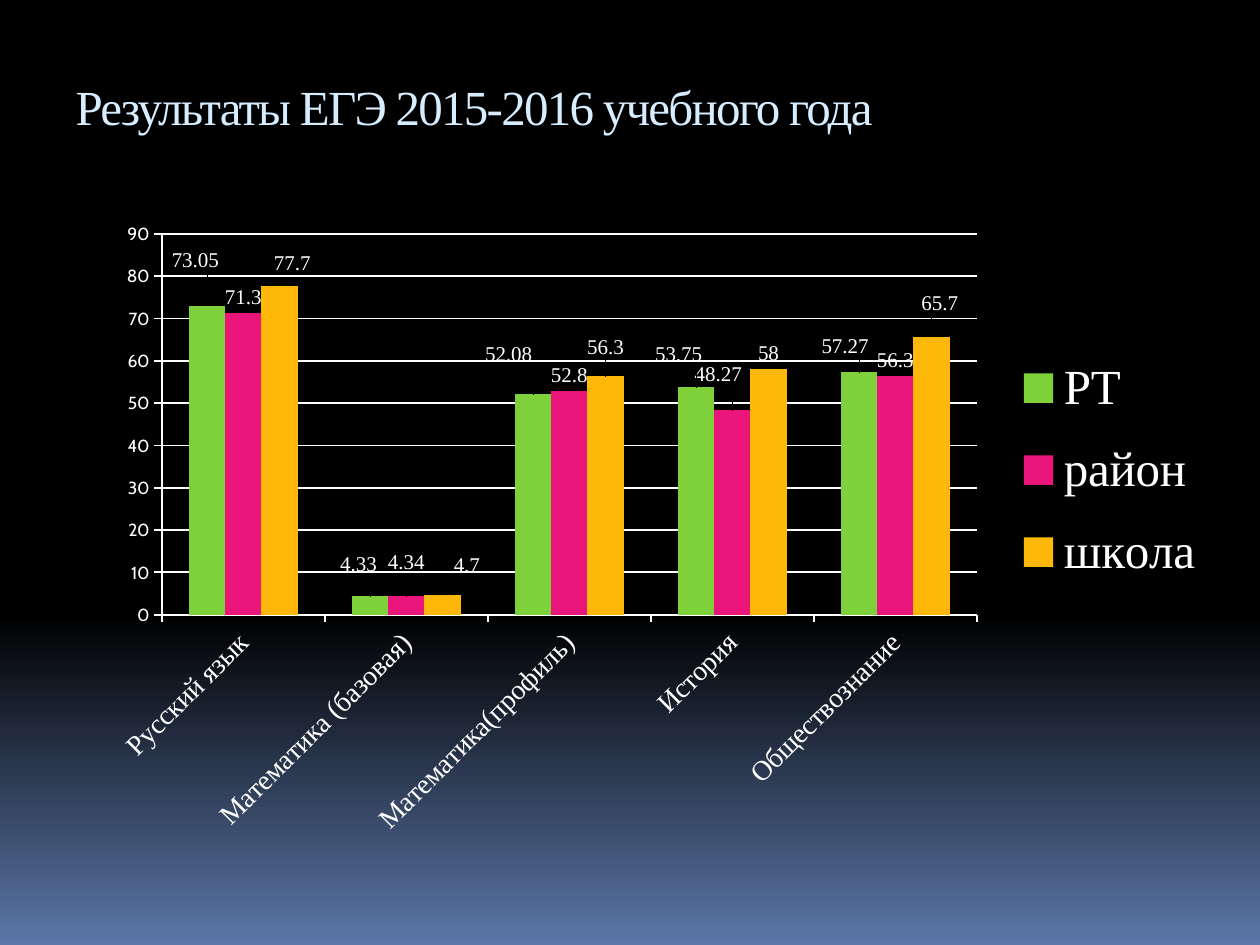
from lxml.etree import SubElement
from pptx import Presentation
from pptx.chart.data import CategoryChartData as Data
from pptx.dml.color import RGBColor
from pptx.enum.chart import XL_CHART_TYPE as Kind, XL_LABEL_POSITION as Pos
from pptx.enum.chart import XL_LEGEND_POSITION as Side, XL_TICK_MARK as Tick
from pptx.enum.text import MSO_ANCHOR as Anchor, PP_ALIGN as Align
from pptx.oxml.ns import qn
from pptx.util import Cm, Pt

SERIF = "Times New Roman"
WHITE = "FFFFFF"
CATS = ["Русский язык", "Математика (базовая)", "Математика(профиль)",
        "История", "Обществознание"]
# Name, colour, values, label shifts by point in percent of the chart
SERIES = [
    ("РТ", "7FD13B", [73.05, 4.33, 52.08, 53.75, 57.27],
     {0: (-1, -4.6), 1: (-1, -2.6), 2: (-2.1, -3.8), 3: (-1.5, -2.7), 4: (-1.2, -1.6)}),
    ("район", "EA157A", [71.3, 4.34, 52.8, 48.27, 56.3],
     {1: (0, -2.9), 3: (-1.2, -3.2)}),
    ("школа", "FEB80A", [77.7, 4.7, 56.3, 58, 65.7],
     {0: (1.1, -1.1), 1: (2.1, -2.2), 2: (0, -2.1), 4: (0.7, -2.7)}),
]


def rgb(code):
    return RGBColor.from_string(code)


def style(font, size, name=SERIF, color=WHITE):
    font.size = Pt(size)
    font.name = name
    font.color.rgb = rgb(color)


def place(item, left, top, width, height):
    item.left, item.top = Cm(left), Cm(top)
    item.width, item.height = Cm(width), Cm(height)


def paint(slide):
    fill = slide.background.fill
    fill.gradient()
    fill.gradient_angle = 270
    for stop, (at, code) in zip(fill.gradient_stops, [(0.65, "000000"), (1, "5B77A8")]):
        stop.position = at
        stop.color.rgb = rgb(code)


def add_title(slide, text):
    title = slide.shapes.title
    place(title, 1.27, 1.42, 22.86, 2.54)
    frame = title.text_frame
    frame.text = text
    frame.vertical_anchor = Anchor.TOP
    para = frame.paragraphs[0]
    para.alignment = Align.LEFT
    style(para.font, 28, color="D6ECFF")
    para.runs[0].font._element.set("spc", "-100")


def set_layout(prior, **parts):
    """Add a manual layout, in percent, right after the given element."""
    old = prior.getnext()
    if old is not None and old.tag == qn("c:layout"):
        old.getparent().remove(old)
    layout = SubElement(prior.getparent(), qn("c:layout"))
    prior.addnext(layout)
    manual = SubElement(layout, qn("c:manualLayout"))
    for tag, val in parts.items():
        text = val if isinstance(val, str) else f"{val / 100:g}"
        SubElement(manual, qn(f"c:{tag}")).set("val", text)


def add_labels(ser, shifts):
    labels = ser.data_labels
    labels.show_value = True
    labels.position = Pos.OUTSIDE_END
    style(labels.font, 12)
    for idx, (x, y) in shifts.items():
        label = ser.points[idx].data_label
        style(label.font, 12)
        label.position = Pos.OUTSIDE_END
    for node in labels._element.findall(qn("c:dLbl")):
        mark = node.find(qn("c:idx"))
        x, y = shifts[int(mark.get("val"))]
        set_layout(mark, x=x, y=y)


def format_axes(chart):
    cat, val = chart.category_axis, chart.value_axis
    val.minimum_scale, val.maximum_scale, val.major_unit = 0, 90, 10
    val.has_major_gridlines = True
    for axis in (cat, val):
        axis.major_tick_mark = Tick.OUTSIDE
    for line in (cat.format.line, val.format.line, val.major_gridlines.format.line):
        line.color.rgb = rgb(WHITE)
        line.width = Pt(1)
    style(val.tick_labels.font, 10, "Cabin")
    style(cat.tick_labels.font, 16)
    body = cat._element.find(qn("c:txPr")).find(qn("a:bodyPr"))
    body.set("rot", "-2700000")
    body.set("vert", "horz")


def add_legend(chart):
    chart.has_legend = True
    legend = chart.legend
    legend.position = Side.RIGHT
    legend.include_in_layout = False
    style(legend.font, 28)
    set_layout(legend._element.find(qn("c:legendPos")),
               xMode="edge", yMode="edge", x=81, y=18, w=18, h=44)


def add_chart(slide):
    data = Data()
    data.categories = CATS
    for name, _, vals, _ in SERIES:
        data.add_series(name, vals)
    box = map(Cm, (1.27, 4.45, 23.44, 12.57))
    chart = slide.shapes.add_chart(Kind.COLUMN_CLUSTERED, *box, data).chart
    chart.has_title = False
    style(chart.font, 10, "Cabin")
    plot = chart.plots[0]
    plot.gap_width, plot.overlap = 150, 0
    plot.vary_by_categories = False
    for ser, (_, color, _, shifts) in zip(plot.series, SERIES):
        ser.format.fill.solid()
        ser.format.fill.fore_color.rgb = rgb(color)
        ser.invert_if_negative = False
        add_labels(ser, shifts)
    format_axes(chart)
    add_legend(chart)
    area = chart._chartSpace.find(qn("c:chart")).find(qn("c:plotArea"))
    mark = SubElement(area, qn("c:layout"))
    area.insert(0, mark)
    set_layout(mark, layoutTarget="inner", xMode="edge", yMode="edge",
               x=8.5, y=2.1, w=70.1, h=61.1)
    area.remove(mark)


def main():
    deck = Presentation()
    deck.slide_width, deck.slide_height = Cm(25.4), Cm(19.05)
    slide = deck.slides.add_slide(deck.slide_layouts[5])
    paint(slide)
    add_title(slide, "Результаты ЕГЭ 2015-2016 учебного года")
    add_chart(slide)
    deck.save("out.pptx")


if __name__ == "__main__":
    main()
